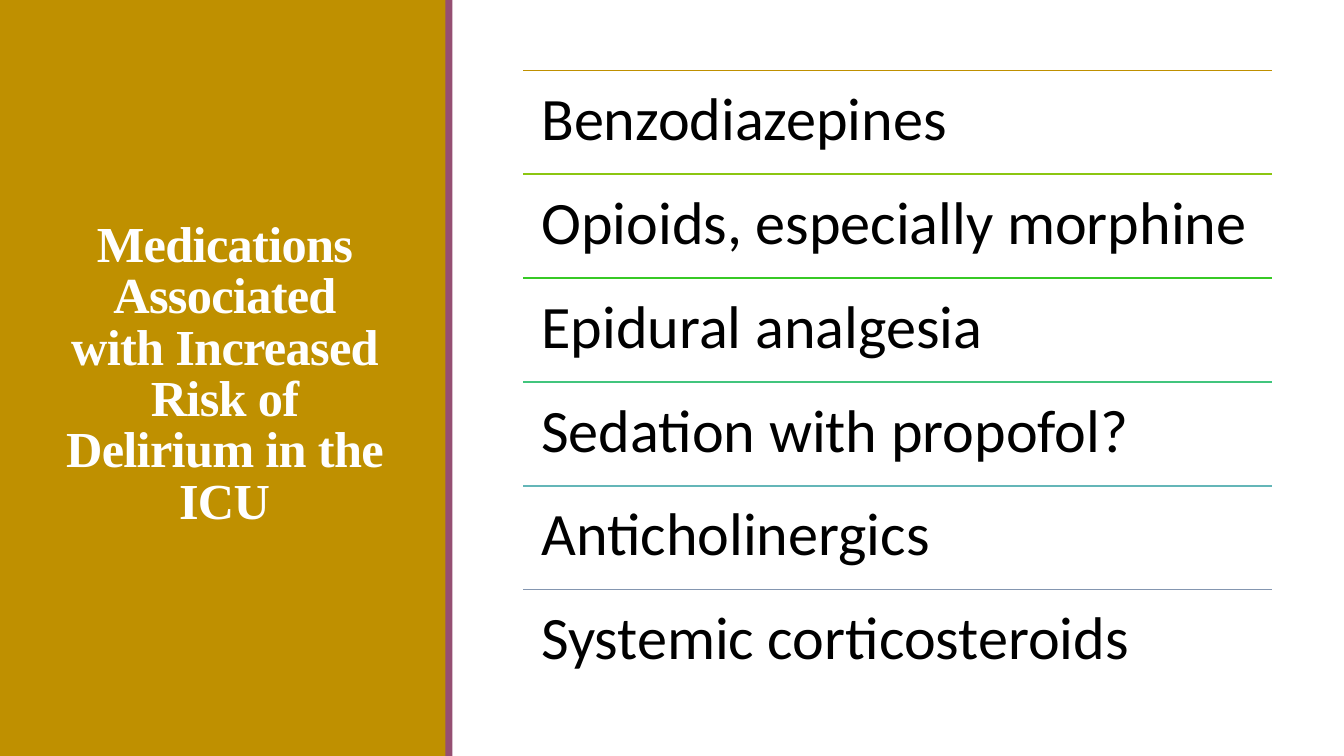
from pptx import Presentation
from pptx.dml.color import RGBColor
from pptx.enum.shapes import MSO_CONNECTOR as Connector, MSO_SHAPE as Shape
from pptx.enum.text import MSO_ANCHOR as Anchor, PP_ALIGN as Align
from pptx.oxml.ns import qn
from pptx.util import Pt
from lxml import etree

# Content
TITLE = "Medications Associated with Increased Risk of Delirium in the ICU"
GOLD = RGBColor(0xBF, 0x90, 0x00)
PLUM = RGBColor(0x95, 0x4F, 0x72)
WHITE = RGBColor(0xFF, 0xFF, 0xFF)
BLACK = RGBColor(0x00, 0x00, 0x00)
MEDICATIONS = [
    ("Benzodiazepines", GOLD),
    ("Opioids, especially morphine", RGBColor(0x8C, 0xC6, 0x11)),
    ("Epidural analgesia", RGBColor(0x37, 0xC9, 0x25)),
    ("Sedation with propofol?", RGBColor(0x41, 0xC5, 0x7D)),
    ("Anticholinergics", RGBColor(0x64, 0xB6, 0xB8)),
    ("Systemic corticosteroids", RGBColor(0x84, 0x96, 0xB0)),
]

# Layout in points
PAGE_WIDTH, PAGE_HEIGHT = 960, 540
LIST_LEFT, LIST_TOP, LIST_WIDTH = 373.7, 50.4, 535
ROW_HEIGHT = 74.15
ROW_INSET = 13

deck = Presentation()
deck.slide_width, deck.slide_height = Pt(PAGE_WIDTH), Pt(PAGE_HEIGHT)
page = deck.slides.add_slide(deck.slide_layouts[5])


def add_panel(left, width, color):
    panel = page.shapes.add_shape(Shape.RECTANGLE, Pt(left), Pt(0), Pt(width), Pt(PAGE_HEIGHT))
    panel.shadow.inherit = False
    panel.fill.solid()
    panel.fill.fore_color.rgb = color
    panel.line.fill.background()
    return panel


def style_text(para, font_name, size, color, spacing):
    para.line_spacing = spacing
    font = para.font
    font.name, font.size, font.color.rgb = font_name, Pt(size), color


def add_row(top, text, color):
    rule = page.shapes.add_connector(
        Connector.STRAIGHT, Pt(LIST_LEFT), Pt(top), Pt(LIST_LEFT + LIST_WIDTH), Pt(top))
    rule.line.color.rgb = color
    rule.line.width = Pt(1.25)
    etree.SubElement(rule._element.spPr, qn("a:effectLst"))

    box = page.shapes.add_textbox(Pt(LIST_LEFT), Pt(top), Pt(LIST_WIDTH), Pt(ROW_HEIGHT))
    frame = box.text_frame
    frame.word_wrap = True
    frame.margin_left = frame.margin_right = Pt(ROW_INSET)
    frame.margin_top = frame.margin_bottom = Pt(ROW_INSET)
    frame.text = text
    style_text(frame.paragraphs[0], "Calibri", 43, BLACK, 0.9)


# Side panel and its edge, placed behind the title
title = page.shapes.title
for panel in (add_panel(0, 319, GOLD), add_panel(318.2, 5, PLUM)):
    title._element.addprevious(panel._element)

# Title
title.left, title.top, title.width, title.height = Pt(38.9), Pt(41), Pt(243), Pt(454.3)
title.text_frame.text = TITLE
title.text_frame.word_wrap = True
title.text_frame.vertical_anchor = Anchor.MIDDLE
heading = title.text_frame.paragraphs[0]
heading.alignment = Align.CENTER
style_text(heading, "Times New Roman", 36, WHITE, 0.85)
heading.font.bold = True
heading.runs[0].font._element.set("spc", "-50")

# Medication list
for index, (medication, rule_color) in enumerate(MEDICATIONS):
    add_row(LIST_TOP + index * ROW_HEIGHT, medication, rule_color)

deck.save("out.pptx")
